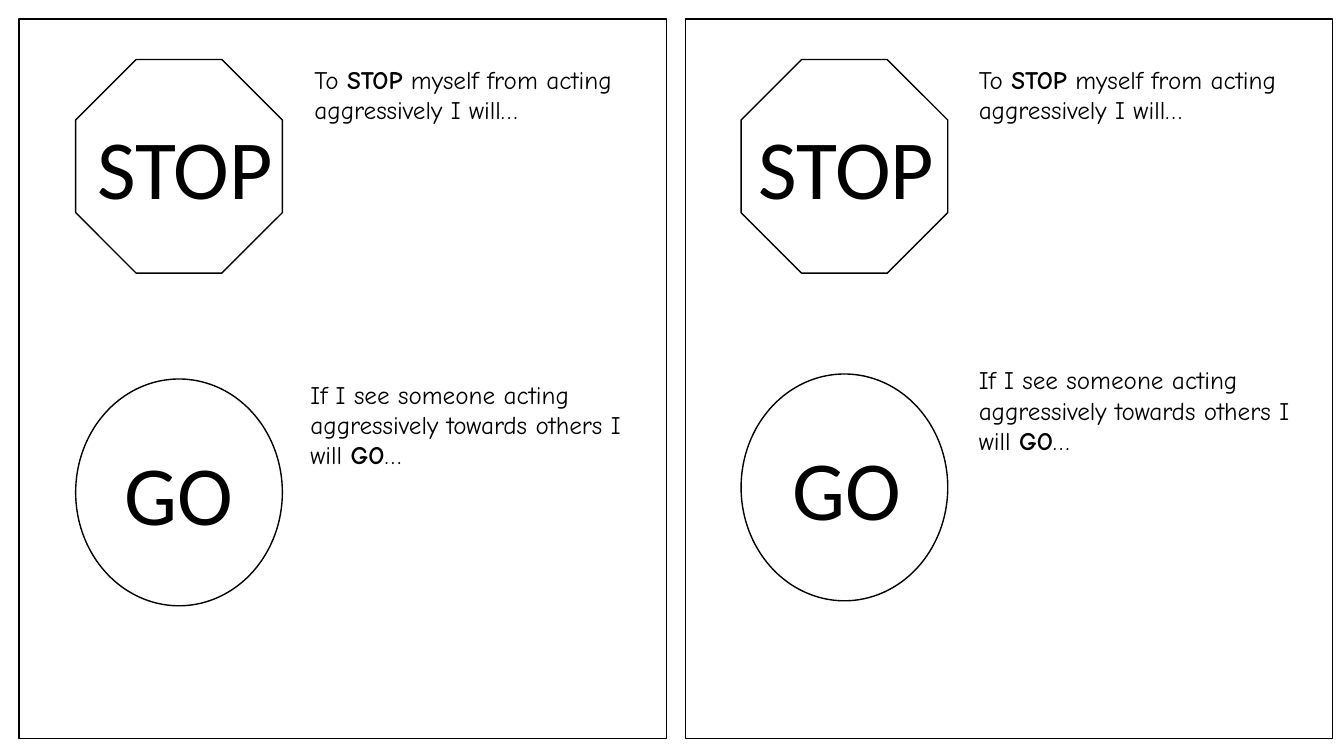
"""Build a slide with two STOP and GO cards side by side."""
from pptx import Presentation
from pptx.dml.color import RGBColor
from pptx.enum.shapes import MSO_SHAPE
from pptx.enum.text import MSO_AUTO_SIZE, PP_ALIGN
from pptx.util import Inches, Pt

RECTANGLE = MSO_SHAPE.RECTANGLE
OCTAGON = MSO_SHAPE.OCTAGON
OVAL = MSO_SHAPE.OVAL
CENTER = PP_ALIGN.CENTER
LEFT = PP_ALIGN.LEFT
FIT_SHAPE = MSO_AUTO_SIZE.SHAPE_TO_FIT_TEXT

SLIDE_WIDTH = Inches(13.33)
SLIDE_HEIGHT = Inches(7.5)
COLORS = {"paper": "FFFFFF", "ink": "000000"}
LABEL_FONT = "Calibri"
NOTE_FONT = "Comic Neue"

CARD_LEFTS = (1.43, 51.01)
CARD_TOP, CARD_WIDTH, CARD_HEIGHT = 2.53, 48.16, 95.2
SIGN_LEFTS = (5.63, 55.14)
SIGN_WIDTH = 15.38
LABEL_HEIGHT = 14.8

STOP = {
    "outline": OCTAGON, "label": "STOP", "sign_height": 28.27,
    "sign_tops": (7.87, 7.87), "label_drop": 6.8, "label_lefts": (6.08, 55.29),
    "note_lefts": (22.66, 72.09), "note_tops": (7.87, 7.87),
    "note_size": (25.96, 9.47),
    "note": ("To ", "STOP", " myself from acting aggressively I will…"),
}
GO = {
    "outline": OVAL, "label": "GO", "sign_height": 30,
    "sign_tops": (50.13, 49.47), "label_drop": 7.6, "label_lefts": (5.63, 55.29),
    "note_lefts": (22.36, 72.09), "note_tops": (49.47, 47.6),
    "note_size": (26.71, 13.47),
    "note": ("If I see someone acting aggressively towards others I will ", "GO", "…"),
}


def color(name):
    """Return the named color."""
    return RGBColor.from_string(COLORS[name])


def place(left, top, width, height):
    """Turn percentages of the slide into lengths."""
    return (int(SLIDE_WIDTH * left / 100), int(SLIDE_HEIGHT * top / 100),
            int(SLIDE_WIDTH * width / 100), int(SLIDE_HEIGHT * height / 100))


def add_outline(slide, kind, *box):
    """Add a white shape with a thin black outline."""
    shape = slide.shapes.add_shape(kind, *place(*box))
    shape.shadow.inherit = False
    shape.fill.solid()
    shape.fill.fore_color.rgb = color("paper")
    shape.line.color.rgb = color("ink")
    shape.line.width = Pt(1)


def add_text(slide, box, parts, font_name, size, alignment):
    """Add one paragraph whose every second part is bold."""
    frame = slide.shapes.add_textbox(*place(*box)).text_frame
    frame.word_wrap = True
    frame.auto_size = FIT_SHAPE
    paragraph = frame.paragraphs[0]
    paragraph.alignment = alignment
    paragraph.font.name = font_name
    paragraph.font.size = Pt(size)
    paragraph.font.color.rgb = color("ink")
    for index, part in enumerate(parts):
        run = paragraph.add_run()
        run.text = part
        if index % 2:
            run.font.bold = True


def add_prompt(slide, prompt, card):
    """Add a sign, its label and its note to one card."""
    sign_top = prompt["sign_tops"][card]
    add_outline(slide, prompt["outline"], SIGN_LEFTS[card], sign_top,
                SIGN_WIDTH, prompt["sign_height"])
    label_box = (prompt["label_lefts"][card], sign_top + prompt["label_drop"],
                 SIGN_WIDTH, LABEL_HEIGHT)
    add_text(slide, label_box, [prompt["label"]], LABEL_FONT, 60, CENTER)
    note_box = (prompt["note_lefts"][card], prompt["note_tops"][card],
                *prompt["note_size"])
    add_text(slide, note_box, prompt["note"], NOTE_FONT, 18, LEFT)


def main():
    """Build and save the presentation."""
    presentation = Presentation()
    presentation.slide_width = SLIDE_WIDTH
    presentation.slide_height = SLIDE_HEIGHT
    slide = presentation.slides.add_slide(presentation.slide_layouts[6])
    for card, left in enumerate(CARD_LEFTS):
        add_outline(slide, RECTANGLE, left, CARD_TOP, CARD_WIDTH, CARD_HEIGHT)
        for prompt in (STOP, GO):
            add_prompt(slide, prompt, card)
    presentation.save("out.pptx")


if __name__ == "__main__":
    main()
